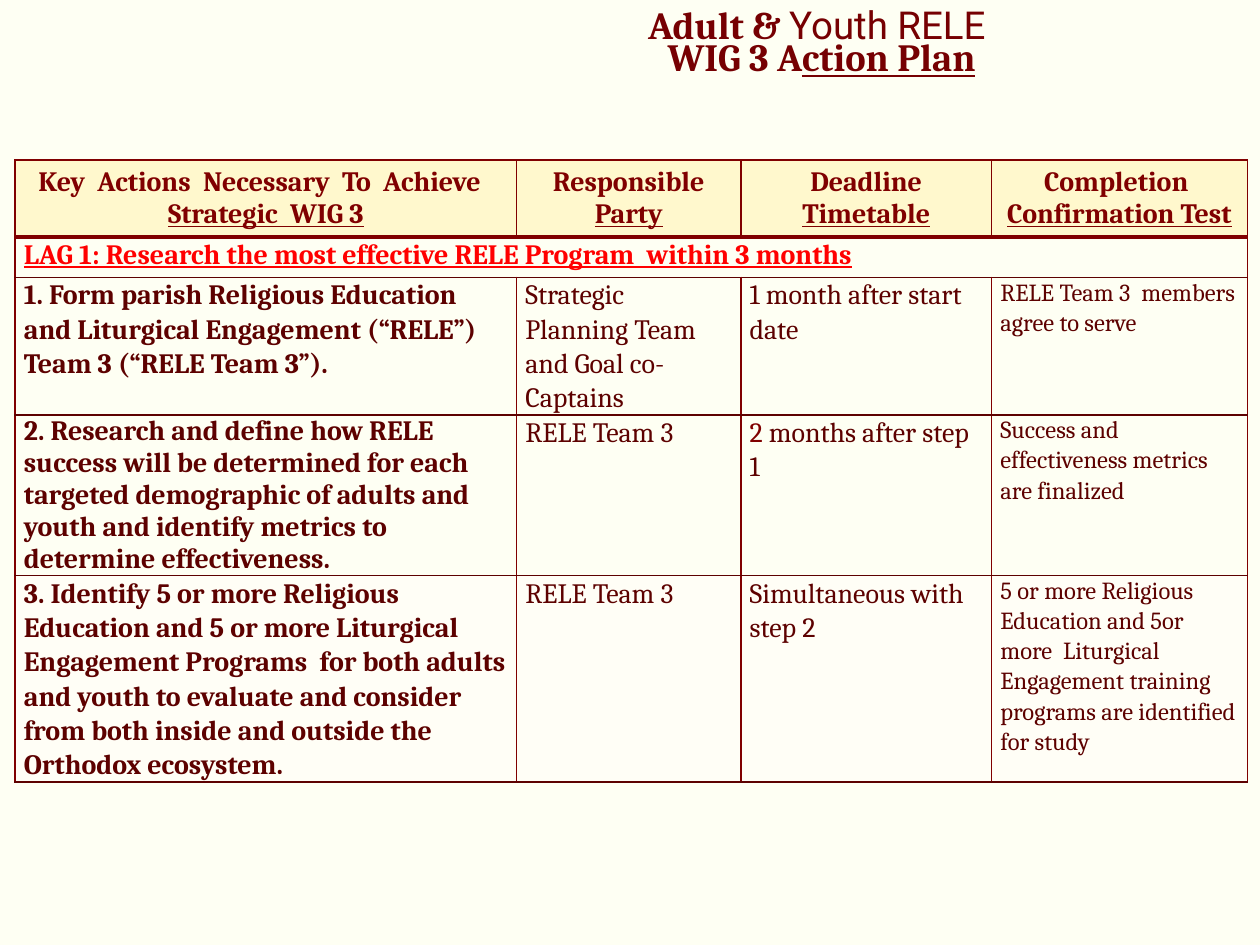
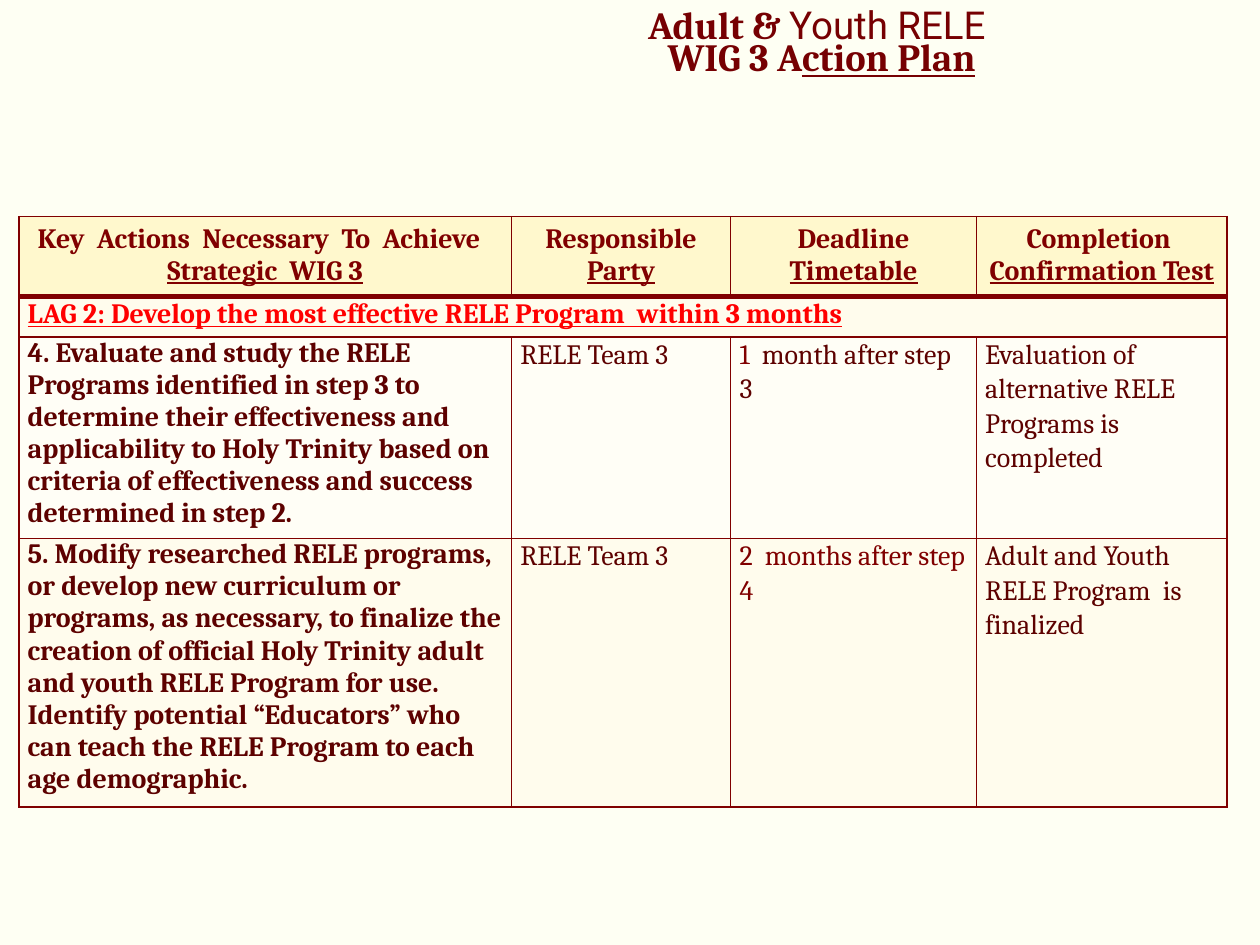
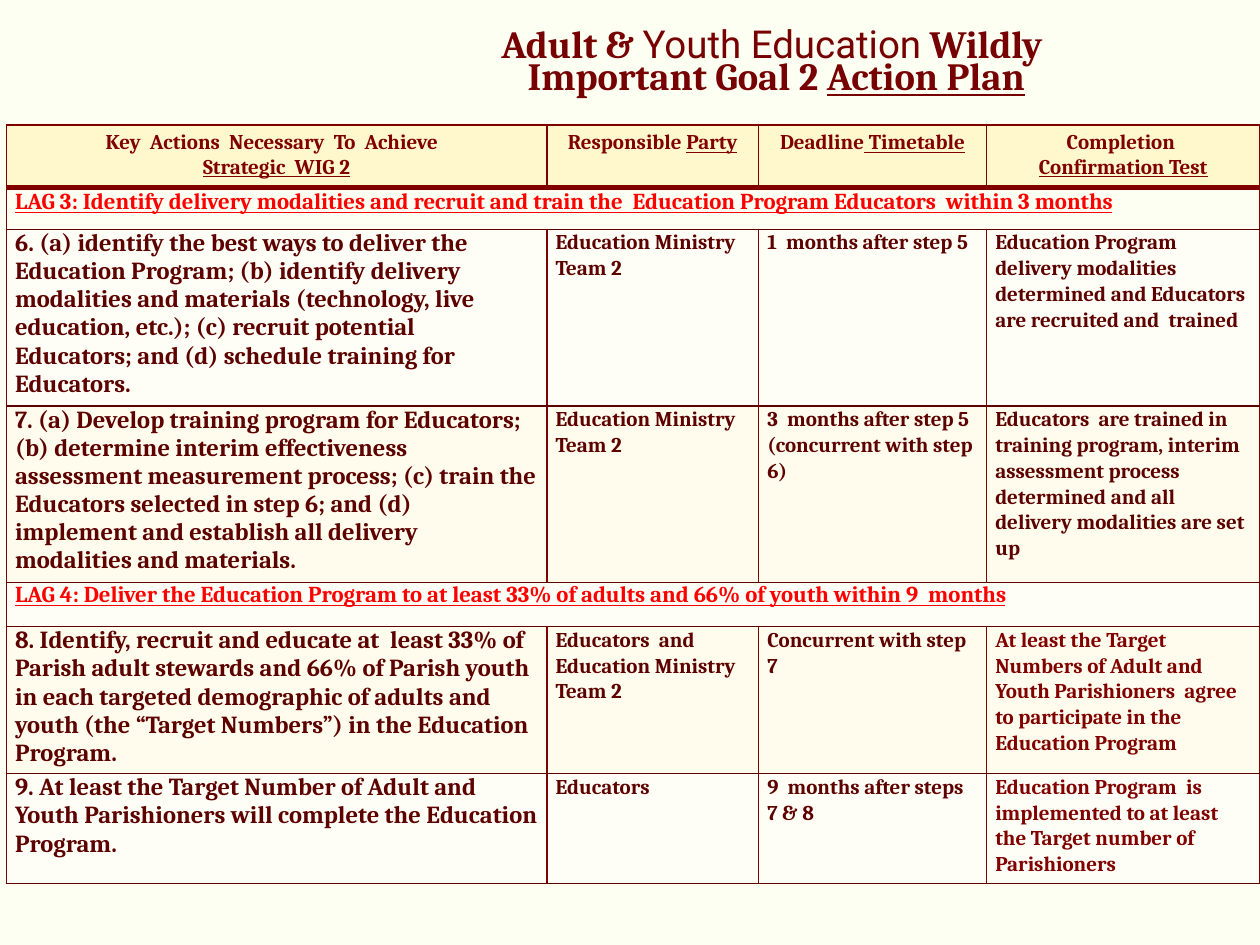
from dataclasses import dataclass

from lxml import etree
from pptx import Presentation, util as u
from pptx.dml.color import RGBColor
from pptx.enum import text
from pptx.oxml.ns import qn

PAPER = RGBColor(0xFE, 0xFF, 0xF3)
HEADER_GOLD = RGBColor(0xFF, 0xF8, 0xCD)
CREAM = RGBColor(0xFF, 0xFC, 0xED)
IVORY = RGBColor(0xFF, 0xFE, 0xF6)
MAROON = RGBColor(0x80, 0x00, 0x00)
DARK = RGBColor(0x5D, 0x01, 0x00)
TITLE_RED = RGBColor(0x76, 0x00, 0x02)
LAG_RED = RGBColor(0xFF, 0x00, 0x00)

SERIF, SANS = "Cambria", "Roboto"
TITLE_WIDTH, TITLE_HEIGHT = 4.98, 1.25
LOOSE = 1.07


@dataclass
class Lag:
    """A heading row across the whole table."""
    goal: str
    height: float
    fill: RGBColor = None
    spacing: float = LOOSE


@dataclass
class Step:
    """One action row; a cell is a string or a list of (words, colour)."""
    cells: list
    height: float
    fill: RGBColor = None
    spacing: float = 1.0


@dataclass
class Plan:
    title: list
    title_at: tuple
    table_at: tuple
    columns: tuple
    headings: list
    heading_height: float
    heading_size: int
    lag_size: int
    step_sizes: tuple
    rows: list
    row_line: RGBColor = DARK
    details_bold: bool = False


def headings(goal_number, party="Responsible |Party", deadline="Deadline |Timetable"):
    """Column headings; the words after a bar are underlined."""
    return [
        f"Key  Actions  Necessary  To  Achieve  \n|Strategic  WIG {goal_number}",
        party, deadline, "Completion \n|Confirmation Test",
    ]


RELE_TITLE = [("Adult & ", SERIF, False), ("Youth RELE ", SANS, False), None,
              ("WIG 3 A", SERIF, False), ("ction Plan", SERIF, True)]
EDUCATION_TITLE = [("Adult & ", SERIF, False), ("Youth Education", SANS, False),
                   (" Wildly  Important Goal 2 ", SERIF, False),
                   ("Action Plan", SERIF, True)]

PLANS = [
    Plan(
        RELE_TITLE, (4.03, -0.26), (0.12, 1.27), (3.98, 1.78, 1.99, 2.03),
        headings(3), 0.61, 16, 16, (16, 16, 16, 14),
        [
            Lag("LAG 1: Research the most effective RELE Program  within 3 months", 0.32),
            Step(["1. Form parish Religious Education and Liturgical Engagement "
                  "(“RELE”) Team 3 (“RELE Team 3”).",
                  "Strategic Planning Team and Goal co-Captains",
                  "1 month after start date",
                  "RELE Team 3  members agree to serve"], 1.09, spacing=LOOSE),
            Step(["2. Research and define how RELE success will be determined for each "
                  "targeted demographic of adults and youth and identify metrics to "
                  "determine effectiveness.",
                  "RELE Team 3",
                  [("2 ", MAROON), ("months after step 1", DARK)],
                  "Success and effectiveness metrics are finalized"], 1.27),
            Step(["3. Identify 5 or more Religious Education and 5 or more Liturgical "
                  "Engagement Programs  for both adults and youth to evaluate and "
                  "consider from both inside and outside the Orthodox ecosystem.",
                  "RELE Team 3",
                  "Simultaneous with step 2",
                  "5 or more Religious Education and 5or more  Liturgical Engagement "
                  "training programs are identified for study"], 1.64, IVORY, LOOSE),
        ]),
    Plan(
        RELE_TITLE, (4.03, -0.26), (0.15, 1.72), (3.91, 1.74, 1.95, 1.99),
        headings(3), 0.6, 16, 16, (16, 16, 16, 16),
        [
            Lag("LAG 2: Develop the most effective RELE Program  within 3 months",
                0.32, CREAM),
            Step(["4. Evaluate and study the RELE Programs identified in step 3 to "
                  "determine their effectiveness and applicability to Holy Trinity "
                  "based on criteria of effectiveness and success determined in step 2.",
                  "RELE Team 3",
                  [("1 ", MAROON), (" month after step 3", DARK)],
                  "Evaluation of alternative RELE Programs is completed"], 1.53, IVORY),
            Step(["5. Modify researched RELE programs, or develop new curriculum or "
                  "programs, as necessary, to finalize the creation of official Holy "
                  "Trinity adult and youth RELE Program for use.  Identify potential "
                  "“Educators” who can teach the RELE Program to each age demographic.",
                  "RELE Team 3",
                  [("2  months after step 4", MAROON)],
                  "Adult and Youth RELE Program  is finalized"], 2.04, CREAM),
        ], row_line=MAROON),
    Plan(
        EDUCATION_TITLE, (3.67, -0.11), (0.05, 0.99), (4.29, 1.68, 1.81, 2.17),
        headings(2, deadline="Deadline| Timetable"), 0.5, 12, 13, (14, 12, 12, 12),
        [
            Lag("LAG 3: Identify delivery modalities and recruit and train the  "
                "Education Program Educators  within 3 months", 0.33),
            Step(["6. (a) identify the best ways to deliver the Education Program; "
                  "(b) identify delivery modalities and materials (technology, live "
                  "education, etc.); (c) recruit potential Educators; and (d) schedule "
                  "training for Educators.",
                  "Education Ministry Team 2",
                  "1  months after step 5",
                  "Education Program delivery modalities determined and Educators "
                  " are recruited and  trained"], 1.34, IVORY),
            Step(["7. (a) Develop training program for Educators; (b) determine interim "
                  "effectiveness assessment measurement process; (c) train the Educators "
                  "selected in step 6; and (d) implement and establish all delivery "
                  "modalities and materials.",
                  "Education Ministry Team 2",
                  "3  months after step 5 (concurrent with step 6)",
                  "Educators  are trained in training program, interim assessment "
                  "process determined and all delivery modalities are set up"],
                 1.34, CREAM),
            Lag("LAG 4: Deliver the Education Program to at least 33% of adults and "
                "66% of youth within 9  months", 0.35, IVORY, 1.0),
            Step(["8. Identify, recruit and educate at  least 33% of Parish adult "
                  "stewards and 66% of Parish youth in each targeted demographic of "
                  "adults and youth (the “Target Numbers”) in the Education Program.",
                  "Educators  and Education Ministry Team 2",
                  "Concurrent with step 7",
                  [("At least the Target  Numbers of Adult and Youth Parishioners  "
                    "agree to participate in the Education Program", MAROON)]],
                 1.11, CREAM),
            Step(["9. At least the Target Number of Adult and Youth Parishioners will "
                  "complete the Education Program.",
                  "Educators",
                  "9  months after steps 7 & 8",
                  [("Education Program  is implemented to at least the Target number "
                    "of Parishioners", MAROON)]], 0.87, IVORY),
        ], details_bold=True),
]


def add_run(paragraph, words, size, color, bold=True, underline=False, face=SERIF):
    run = paragraph.add_run()
    run.text = words
    font = run.font
    font.name, font.size, font.bold, font.underline = face, u.Pt(size), bold, underline
    font.color.rgb = color


def add_title(slide, plan):
    left, top = plan.title_at
    frame = slide.shapes.add_textbox(u.Inches(left), u.Inches(top), u.Inches(TITLE_WIDTH),
                                     u.Inches(TITLE_HEIGHT)).text_frame
    frame.word_wrap = True
    frame.vertical_anchor = text.MSO_ANCHOR.MIDDLE
    paragraph = frame.paragraphs[0]
    paragraph.alignment = text.PP_ALIGN.CENTER
    paragraph.line_spacing = 0.7
    for part in plan.title:
        if part is None:
            paragraph.add_line_break()
        else:
            words, face, underline = part
            add_run(paragraph, words, 22, TITLE_RED, face == SERIF, underline, face)


def style_cell(cell, fill, row_line, top_line, bottom_width=1):
    """Draw the four borders, then the fill that must follow them."""
    properties = cell._tc.get_or_add_tcPr()
    for side, color, width in (("L", MAROON, 1), ("R", MAROON, 1),
                               ("T", top_line, 1), ("B", row_line, bottom_width)):
        line = etree.SubElement(properties, qn(f"a:ln{side}"), w=str(u.Pt(width)))
        solid = etree.SubElement(line, qn("a:solidFill"))
        etree.SubElement(solid, qn("a:srgbClr"), val=str(color))
    if fill is None:
        cell.fill.background()
    else:
        cell.fill.solid()
        cell.fill.fore_color.rgb = fill


def body_paragraph(cell, spacing):
    cell.margin_left = cell.margin_right = u.Inches(0.07)
    cell.margin_top = cell.margin_bottom = 0
    paragraph = cell.text_frame.paragraphs[0]
    paragraph.line_spacing = spacing
    return paragraph


def fill_heading(cell, heading, size):
    style_cell(cell, HEADER_GOLD, MAROON, MAROON, bottom_width=3)
    frame = cell.text_frame
    for index, line in enumerate(heading.split("\n")):
        paragraph = frame.add_paragraph() if index else frame.paragraphs[0]
        paragraph.alignment = text.PP_ALIGN.CENTER
        plain, _, underlined = line.partition("|")
        for words, underline in ((plain, False), (underlined, True)):
            if words:
                add_run(paragraph, words, size, MAROON, underline=underline)


def fill_lag(cells, lag, plan, top_line):
    for cell in cells:
        style_cell(cell, lag.fill, plan.row_line, top_line)
    cells[0].merge(cells[-1])
    add_run(body_paragraph(cells[0], lag.spacing), lag.goal, plan.lag_size,
            LAG_RED, underline=True)


def fill_step(cells, step, plan, top_line):
    for column, (cell, content) in enumerate(zip(cells, step.cells)):
        style_cell(cell, step.fill, plan.row_line, top_line)
        is_action = column == 0
        paragraph = body_paragraph(cell, step.spacing if is_action else LOOSE)
        parts = [(content, DARK)] if isinstance(content, str) else content
        for words, color in parts:
            add_run(paragraph, words, plan.step_sizes[column], color,
                    is_action or plan.details_bold)


def add_plan_table(slide, plan):
    left, top = plan.table_at
    heights = [plan.heading_height] + [row.height for row in plan.rows]
    table = slide.shapes.add_table(
        len(heights), len(plan.columns), u.Inches(left), u.Inches(top),
        u.Inches(sum(plan.columns)), u.Inches(sum(heights))).table
    for column, width in zip(table.columns, plan.columns):
        column.width = u.Inches(width)
    for row, height in zip(table.rows, heights):
        row.height = u.Inches(height)

    for cell, heading in zip(table.rows[0].cells, plan.headings):
        fill_heading(cell, heading, plan.heading_size)
    top_line = MAROON
    for number, content in enumerate(plan.rows, start=1):
        cells = list(table.rows[number].cells)
        fill_row = fill_lag if isinstance(content, Lag) else fill_step
        fill_row(cells, content, plan, top_line)
        top_line = plan.row_line


def main():
    deck = Presentation()
    deck.slide_width, deck.slide_height = u.Inches(10), u.Inches(7.5)
    for plan in PLANS:
        slide = deck.slides.add_slide(deck.slide_layouts[6])
        slide.background.fill.solid()
        slide.background.fill.fore_color.rgb = PAPER
        add_plan_table(slide, plan)
        add_title(slide, plan)
    deck.save("out.pptx")


if __name__ == "__main__":
    main()
